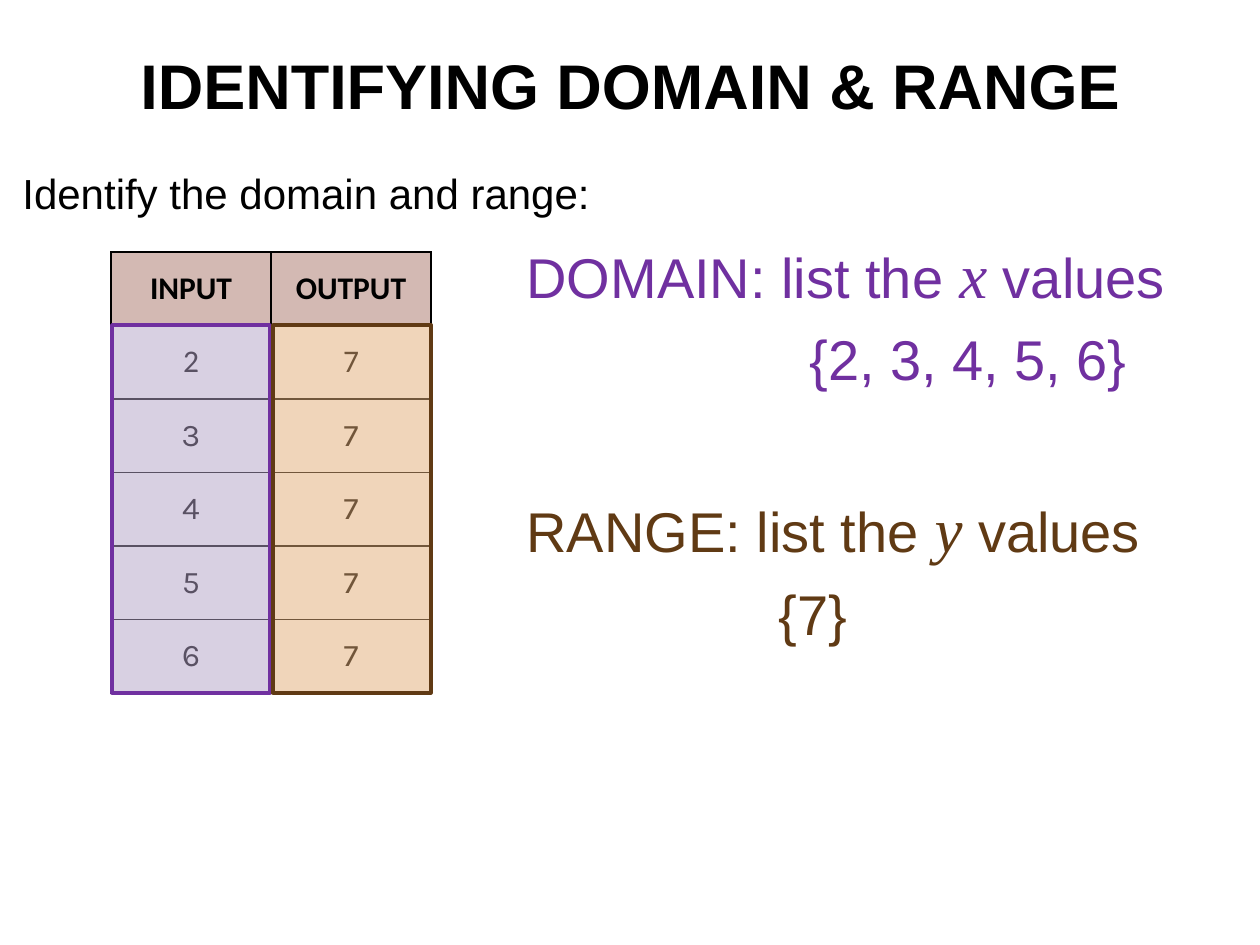
import dataclasses

import lxml.etree
import pptx
import pptx.dml.color
import pptx.enum.shapes
import pptx.enum.text
import pptx.oxml.ns
import pptx.slide
import pptx.table
import pptx.text.text
import pptx.util

EMU_PER_PX = 914400 / 126
BLACK, PURPLE, BROWN = "000000", "7030A0", "603A14"
HEADER_FILL, WHITE = "D3B9B3", "FFFFFF"
CENTER = pptx.enum.text.PP_ALIGN.CENTER
MIDDLE = pptx.enum.text.MSO_ANCHOR.MIDDLE
QN = pptx.oxml.ns.qn

TABLE_LEFT, TABLE_TOP, TABLE_WIDTH, TABLE_HEIGHT = 111, 252, 320, 441
TABLE_ROWS = [("INPUT", "OUTPUT")] + [(str(value), "7") for value in range(2, 7)]


@dataclasses.dataclass(frozen=True)
class Run:
    text: str
    size: int
    color: str
    font: str = "Arial"
    bold: bool = False
    italic: bool = False


@dataclasses.dataclass(frozen=True)
class Line:
    runs: tuple[Run, ...]
    indent: int
    space_before: float


@dataclasses.dataclass(frozen=True)
class Highlight:
    left: int
    fill: str
    outline: str


def px(length: float) -> pptx.util.Emu:
    return pptx.util.Emu(round(length * EMU_PER_PX))


def rgb(color: str) -> pptx.dml.color.RGBColor:
    return pptx.dml.color.RGBColor.from_string(color)


def add_run(paragraph: pptx.text.text._Paragraph, run: Run) -> None:
    text_run = paragraph.add_run()
    text_run.text = run.text
    font = text_run.font
    font.name, font.size = run.font, pptx.util.Pt(run.size)
    font.bold, font.italic = run.bold, run.italic
    font.color.rgb = rgb(run.color)


def list_values(label: str, variable: str, color: str) -> tuple[Run, ...]:
    return (
        Run(f"{label}: list the ", 32, color),
        Run(variable, 36, color, font="Times New Roman", italic=True),
        Run(" values", 32, color),
    )


def add_title(slide: pptx.slide.Slide) -> None:
    title = slide.shapes.title
    title.left, title.top, title.width, title.height = px(32), px(32), px(1197), px(105)
    title.text_frame.vertical_anchor = MIDDLE
    paragraph = title.text_frame.paragraphs[0]
    paragraph.alignment = CENTER
    add_run(paragraph, Run("IDENTIFYING DOMAIN & RANGE", 36, BLACK, bold=True))


def add_body(slide: pptx.slide.Slide, lines: list[Line]) -> None:
    frame = slide.shapes.add_textbox(px(10), px(161), px(1239), px(701)).text_frame
    frame.word_wrap = True
    for index, line in enumerate(lines):
        paragraph = frame.add_paragraph() if index else frame.paragraphs[0]
        paragraph.space_before = pptx.util.Pt(line.space_before)
        properties = paragraph._p.get_or_add_pPr()
        properties.set("marL", str(px(line.indent)))
        properties.set("indent", "0")
        for run in line.runs:
            add_run(paragraph, run)


def add_borders(cell: pptx.table._Cell) -> None:
    """Draw a 1 pt black line on each side; borders must precede the cell's fill."""
    properties = cell._tc.get_or_add_tcPr()
    for position, side in enumerate(("lnL", "lnR", "lnT", "lnB")):
        border = lxml.etree.Element(QN(f"a:{side}"), w=str(pptx.util.Pt(1)))
        fill = lxml.etree.SubElement(border, QN("a:solidFill"))
        lxml.etree.SubElement(fill, QN("a:srgbClr"), val=BLACK)
        properties.insert(position, border)


def add_value_table(slide: pptx.slide.Slide) -> None:
    frame = slide.shapes.add_table(
        len(TABLE_ROWS), 2, px(TABLE_LEFT), px(TABLE_TOP), px(TABLE_WIDTH), px(TABLE_HEIGHT)
    )
    table = frame.table
    table.first_row = table.horz_banding = False
    for row, texts in enumerate(TABLE_ROWS):
        for column, text in enumerate(texts):
            cell = table.cell(row, column)
            cell.vertical_anchor = MIDDLE
            if row == 0 or column == 1:
                cell.fill.solid()
                cell.fill.fore_color.rgb = rgb(WHITE if row else HEADER_FILL)
            else:
                cell.fill.background()
            add_borders(cell)
            paragraph = cell.text_frame.paragraphs[0]
            paragraph.alignment = CENTER
            font = "Calibri" if row < 2 else "Karla"
            add_run(paragraph, Run(text, 18, BLACK, font=font, bold=row == 0))


def add_highlight(slide: pptx.slide.Slide, highlight: Highlight) -> None:
    """Cover the values of one table column with a half-transparent rectangle."""
    shape = slide.shapes.add_shape(
        pptx.enum.shapes.MSO_SHAPE.RECTANGLE, px(highlight.left), px(325), px(158), px(368)
    )
    shape.shadow.inherit = False
    shape.fill.solid()
    shape.fill.fore_color.rgb = rgb(highlight.fill)
    color = shape._element.spPr.find(QN("a:solidFill")).find(QN("a:srgbClr"))
    lxml.etree.SubElement(color, QN("a:alpha"), val="50000")
    shape.line.color.rgb = rgb(highlight.outline)
    shape.line.width = pptx.util.Pt(2)


def main() -> None:
    presentation = pptx.Presentation()
    presentation.slide_width, presentation.slide_height = px(1260), px(945)
    slide = presentation.slides.add_slide(presentation.slide_layouts[5])
    add_title(slide)
    add_body(slide, [
        Line((Run("Identify the domain and range:", 24, BLACK),), 0, 3),
        Line(list_values("DOMAIN", "x", PURPLE), 504, 10),
        Line((Run("{2, 3, 4, 5, 6}", 32, PURPLE),), 787, 8),
        Line(list_values("RANGE", "y", BROWN), 504, 56),
        Line((Run("{7}", 32, BROWN),), 756, 8),
    ])
    add_value_table(slide)
    for highlight in (Highlight(112, "B3A2C7", PURPLE), Highlight(273, "E2AC76", BROWN)):
        add_highlight(slide, highlight)
    presentation.save("out.pptx")


if __name__ == "__main__":
    main()
